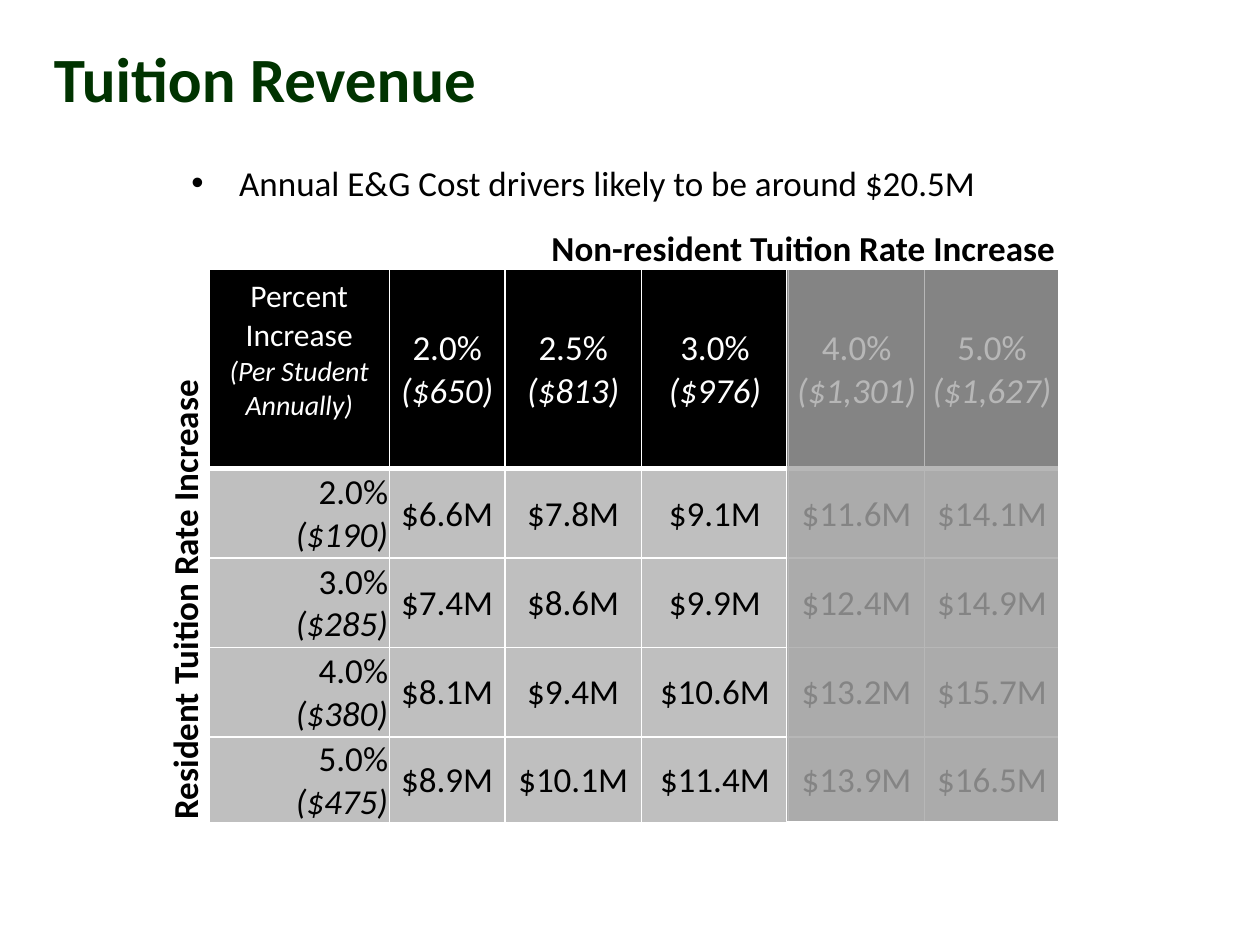
from lxml.etree import SubElement
from pptx import Presentation
from pptx.dml.color import RGBColor
from pptx.enum.shapes import MSO_SHAPE
from pptx.enum.text import MSO_ANCHOR, PP_ALIGN
from pptx.oxml import parse_xml
from pptx.oxml.ns import nsdecls, qn
from pptx.util import Inches, Pt

BLACK = RGBColor(0, 0, 0)
WHITE = RGBColor(255, 255, 255)
GREEN = RGBColor(0, 0x33, 0)
SILVER = RGBColor(0xBF, 0xBF, 0xBF)
GRAY = RGBColor(0xA6, 0xA6, 0xA6)
FONT = "Calibri"

LEFT, TOP = 1.66, 2.14
COLS = [1.43, 0.92, 1.08, 1.17, 1.08, 1.07]
ROWS = [1.58, 0.71, 0.71, 0.71, 0.68]
DATA = [
    ["Percent Increase\n(Per Student Annually)", "2.0%\n($650)", "2.5%\n($813)",
     "3.0%\n($976)", "4.0%\n($1,301)", "5.0%\n($1,627)"],
    ["2.0%\n($190)", "$6.6M", "$7.8M", "$9.1M", "$11.6M", "$14.1M"],
    ["3.0%\n($285)", "$7.4M", "$8.6M", "$9.9M", "$12.4M", "$14.9M"],
    ["4.0%\n($380)", "$8.1M", "$9.4M", "$10.6M", "$13.2M", "$15.7M"],
    ["5.0%\n($475)", "$8.9M", "$10.1M", "$11.4M", "$13.9M", "$16.5M"],
]


def style(p, size, color, bold=False, italic=False):
    for r in p.runs:
        r.font.name = FONT
        r.font.size = Pt(size)
        r.font.color.rgb = color
        r.font.bold = bold
        r.font.italic = italic


def add_text(s, text, box, size, color=BLACK, bold=True, align=PP_ALIGN.CENTER):
    sp = s.shapes.add_textbox(*map(Inches, box))
    tf = sp.text_frame
    tf.word_wrap = True
    tf.text = text
    p = tf.paragraphs[0]
    p.alignment = align
    style(p, size, color, bold)
    return sp


prs = Presentation()
prs.slide_width, prs.slide_height = Inches(10), Inches(7.5)
s = prs.slides.add_slide(prs.slide_layouts[6])

sp = add_text(s, "Annual E&G Cost drivers likely to be around $20.5M",
              (1.42, 1.23, 8.45, 0.77), 20, bold=False, align=PP_ALIGN.LEFT)
pPr = sp.text_frame.paragraphs[0]._p.get_or_add_pPr()
pPr.set("marL", str(Inches(0.38)))
pPr.set("indent", str(Inches(-0.38)))
SubElement(pPr, qn("a:buFont"), typeface="Arial")
SubElement(pPr, qn("a:buChar"), char="•")

sp = add_text(s, "Tuition Revenue", (0.33, 0, 9.42, 1.22), 36, GREEN, align=PP_ALIGN.LEFT)
sp.text_frame.vertical_anchor = MSO_ANCHOR.MIDDLE

table = s.shapes.add_table(len(ROWS), len(COLS), Inches(LEFT), Inches(TOP),
                           Inches(sum(COLS)), Inches(sum(ROWS))).table
for col, width in zip(table.columns, COLS):
    col.width = Inches(width)
for i, height in enumerate(ROWS):
    table.rows[i].height = Inches(height)
    for j, text in enumerate(DATA[i]):
        cell = table.cell(i, j)
        corner = i == j == 0
        cell.text = text
        cell.vertical_anchor = MSO_ANCHOR.MIDDLE
        if corner:
            cell.margin_bottom = Inches(0.35)
        else:
            cell.margin_left = cell.margin_right = cell.margin_top = Inches(0.01)
            cell.margin_bottom = 0
        for p in cell.text_frame.paragraphs:
            italic = p.text.startswith("(")
            size = (16 if italic else 18) if corner else 20
            p.alignment = PP_ALIGN.RIGHT if i and j == 0 else PP_ALIGN.CENTER
            style(p, size, BLACK if i else WHITE, italic=italic)
        tcPr = cell._tc.get_or_add_tcPr()
        for side in "LRTB":
            thick = (side, i) in (("B", 0), ("T", 1))
            tcPr.append(parse_xml(
                f'<a:ln{side} {nsdecls("a")} w="{Pt(3 if thick else 1)}">'
                f'<a:solidFill><a:srgbClr val="{WHITE}"/></a:solidFill></a:ln{side}>'))
        cell.fill.solid()
        cell.fill.fore_color.rgb = SILVER if i else BLACK

add_text(s, "Non-resident Tuition Rate Increase", (3.75, 1.75, 5.25, 0.44), 20)
sp = add_text(s, "Resident Tuition Rate Increase", (-1.16, 4.54, 5.25, 0.44), 20)
sp.rotation = 270

sp = s.shapes.add_shape(MSO_SHAPE.RECTANGLE, Inches(6.24), Inches(TOP),
                        Inches(2.16), Inches(4.38))
sp.shadow.inherit = False
sp.fill.solid()
sp.fill.fore_color.rgb = GRAY
color = sp._element.spPr.find(qn("a:solidFill"))[0]
SubElement(color, qn("a:alpha"), val="80000")
sp.line.color.rgb = WHITE
sp.line.width = Pt(0.75)

prs.save("out.pptx")
